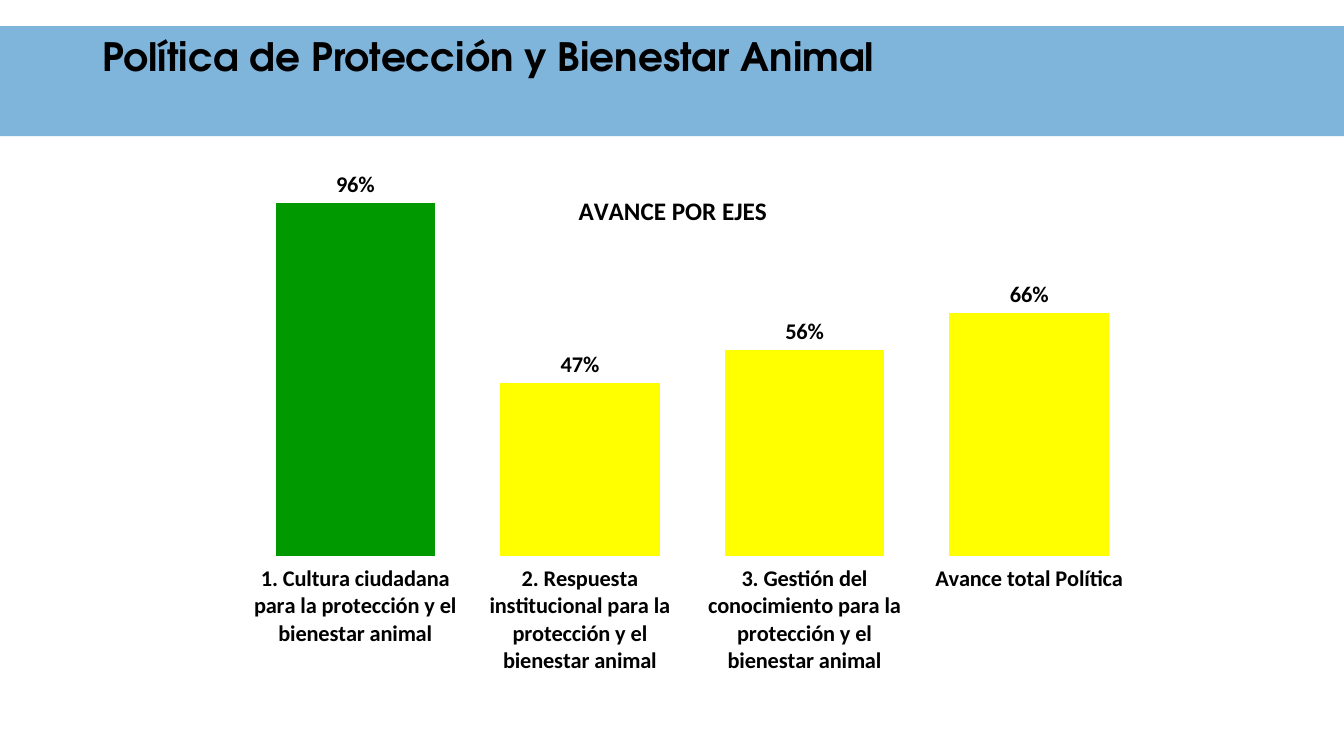
from dataclasses import dataclass

from lxml.etree import SubElement
from pptx import Presentation
from pptx.chart.data import CategoryChartData
from pptx.dml.color import RGBColor as RGB
from pptx.enum.chart import XL_CHART_TYPE as ChartType
from pptx.enum.chart import XL_LABEL_POSITION as LabelPos
from pptx.enum.chart import XL_TICK_LABEL_POSITION as TickLabelPos
from pptx.enum.chart import XL_TICK_MARK as TickMark
from pptx.enum.shapes import MSO_SHAPE as Shape
from pptx.enum.text import MSO_ANCHOR as Anchor
from pptx.enum.text import MSO_AUTO_SIZE as AutoSize
from pptx.enum.text import PP_ALIGN as Align
from pptx.oxml import parse_xml
from pptx.oxml.ns import nsdecls, qn
from pptx.util import Pt


@dataclass(frozen=True)
class Theme:
    """Colours, fonts and type sizes of the slide."""
    band: RGB = RGB(0x1C, 0x7A, 0xBF)
    band_alpha: int = 56
    ink: RGB = RGB(0, 0, 0)
    high: RGB = RGB(0, 0x99, 0)
    medium: RGB = RGB(0xFF, 0xFF, 0)
    heading_font: str = "TeX Gyre Adventor"
    body_font: str = "Calibri"
    heading_size: float = 27.9
    chart_title_size: float = 18
    label_size: float = 16


THEME = Theme()
WIDTH, HEIGHT = 960, 540
HIGH_FROM = 0.9
PROGRESS = {
    "1. Cultura ciudadana para la protección y el bienestar animal": 0.96,
    "2. Respuesta institucional para la protección y el bienestar animal": 0.47,
    "3. Gestión del conocimiento para la protección y el bienestar animal": 0.56,
    "Avance total Política": 0.66,
}


def style_font(font, name, size):
    """Apply the bold black type used throughout the slide."""
    font.name, font.size, font.bold = name, Pt(size), True
    font.color.rgb = THEME.ink


def set_layout(parent, index, **values):
    """Give a chart part a manual layout in fractions of the chart."""
    for layout in parent.findall(qn("c:layout")):
        parent.remove(layout)
    settings = "".join(f'<c:{key} val="{value}"/>' for key, value in values.items())
    parent.insert(index, parse_xml(
        f'<c:layout {nsdecls("c")}><c:manualLayout>{settings}</c:manualLayout></c:layout>'))


def add_header(slide, left, top, width, height):
    """Draw the translucent band and set the title on it."""
    band = slide.shapes.add_shape(Shape.RECTANGLE, Pt(left), Pt(top), Pt(width), Pt(height))
    band.shadow.inherit = False
    band.line.fill.background()
    band.fill.solid()
    band.fill.fore_color.rgb = THEME.band
    colour = band.element.spPr.find(qn("a:solidFill"))[0]
    SubElement(colour, qn("a:alpha"), val=str(THEME.band_alpha * 1000))

    heading = slide.shapes.title
    heading.element.addprevious(band.element)
    heading.left, heading.top = Pt(left + 66), Pt(top + 10)
    heading.width, heading.height = Pt(width - 132), Pt(57)
    frame = heading.text_frame
    frame.text = "Política de Protección y Bienestar Animal"
    frame.word_wrap = True
    frame.auto_size = AutoSize.NONE
    frame.vertical_anchor = Anchor.MIDDLE
    frame.margin_top, frame.margin_bottom = Pt(0), Pt(30)
    line = frame.paragraphs[0]
    line.alignment = Align.LEFT
    line.line_spacing = 0.9
    style_font(line.font, THEME.heading_font, THEME.heading_size)


def add_progress_chart(slide, left, top, width, height):
    """Chart the progress of each axis, coloured by level reached."""
    data = CategoryChartData(number_format="0%")
    data.categories = list(PROGRESS)
    data.add_series("Avance", list(PROGRESS.values()))
    chart = slide.shapes.add_chart(
        ChartType.COLUMN_CLUSTERED, Pt(left), Pt(top), Pt(width), Pt(height), data).chart
    chart.has_legend = False
    style_font(chart.font, THEME.body_font, THEME.label_size)

    caption = chart.chart_title
    caption.text_frame.text = "AVANCE POR EJES"
    style_font(caption.text_frame.paragraphs[0].font, THEME.body_font, THEME.chart_title_size)
    caption_xml = chart.element.find(".//" + qn("c:title"))
    set_layout(caption_xml, 1, xMode="edge", yMode="edge", x=0.5, y=0.03)
    caption_xml.find(qn("c:overlay")).set("val", "1")
    set_layout(chart.element.find(".//" + qn("c:plotArea")), 0, layoutTarget="inner",
               xMode="edge", yMode="edge", x=0.22, y=0.03, w=0.76, h=0.65)

    axes = chart.category_axis
    axes.major_tick_mark = TickMark.NONE
    axes.tick_label_position = TickLabelPos.LOW
    axes.format.line.fill.background()
    style_font(axes.tick_labels.font, THEME.body_font, THEME.label_size)
    scale = chart.value_axis
    scale.minimum_scale, scale.maximum_scale = 0, 1
    scale.has_major_gridlines = False
    scale.visible = False

    plot = chart.plots[0]
    plot.gap_width = 41
    plot.vary_by_categories = False
    plot.has_data_labels = True
    labels = plot.data_labels
    labels.show_value = True
    labels.position = LabelPos.OUTSIDE_END
    labels.number_format, labels.number_format_is_linked = "0%", False
    style_font(labels.font, THEME.body_font, THEME.label_size)
    progress = plot.series[0]
    for index, share in enumerate(PROGRESS.values()):
        fill = progress.points[index].format.fill
        fill.solid()
        fill.fore_color.rgb = THEME.high if share >= HIGH_FROM else THEME.medium


def main():
    """Build and save the slide."""
    deck = Presentation()
    deck.slide_width, deck.slide_height = Pt(WIDTH), Pt(HEIGHT)
    slide = deck.slides.add_slide(deck.slide_layouts.get_by_name("Title Only"))
    add_header(slide, 0, 18.72, WIDTH, 78.48)
    add_progress_chart(slide, -12.24, 122.4, 844.56, 403.92)
    deck.save("out.pptx")


if __name__ == "__main__":
    main()
